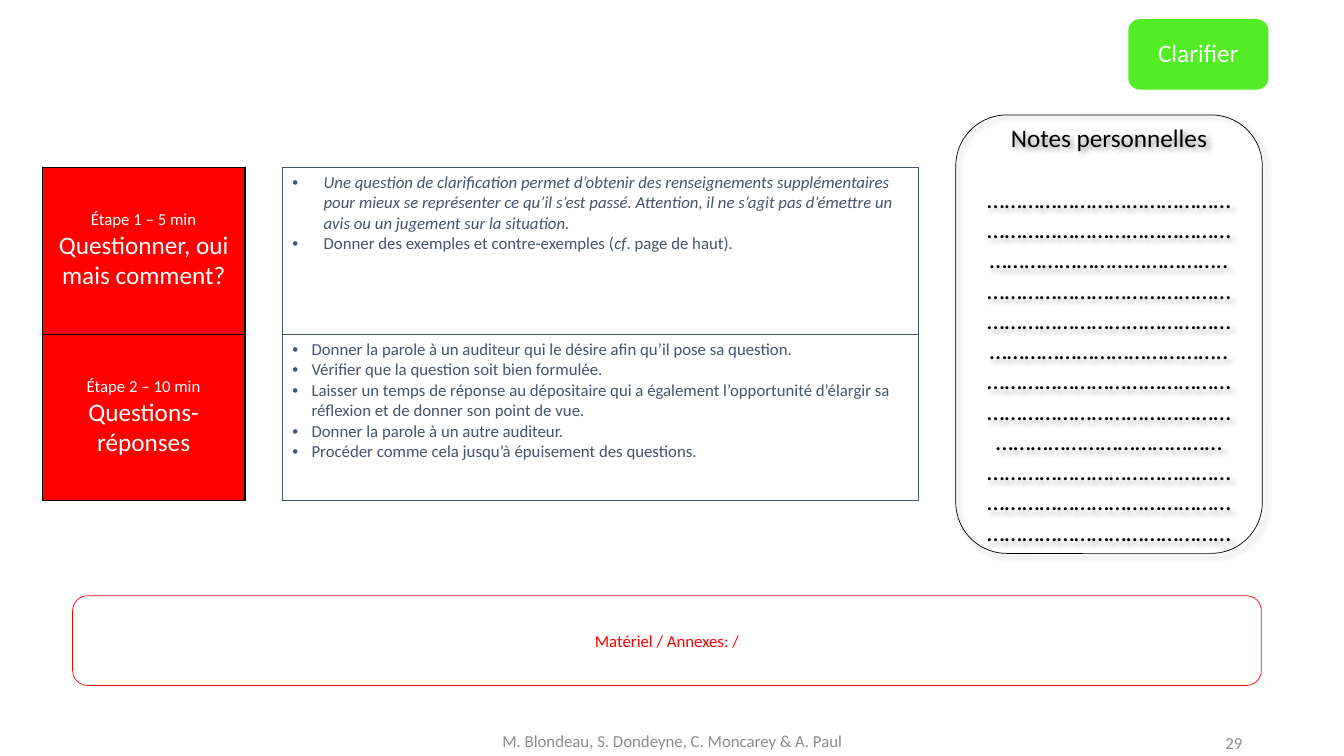
from lxml.etree import SubElement
from pptx import Presentation
from pptx.dml.color import RGBColor
from pptx.enum.shapes import MSO_SHAPE
from pptx.enum.text import MSO_ANCHOR, MSO_AUTO_SIZE, PP_ALIGN
from pptx.oxml import parse_xml
from pptx.oxml.ns import nsdecls, qn
from pptx.util import Inches, Pt

RED = RGBColor(0xFF, 0x00, 0x00)
GREEN = RGBColor(0x52, 0xED, 0x24)
SLATE = RGBColor(0x44, 0x54, 0x6A)
GREY = RGBColor(0x8C, 0x8C, 0x8C)
BLACK = RGBColor(0x00, 0x00, 0x00)
WHITE = RGBColor(0xFF, 0xFF, 0xFF)

STEPS = [
    ("Étape 1 – 5 min", "Questionner, oui mais comment?"),
    ("Étape 2 – 10 min", "Questions-réponses"),
]
DEFINITION = (
    "Une question de clarification permet d’obtenir des renseignements supplémentaires "
    "pour mieux se représenter ce qu’il s’est passé. Attention, il ne s’agit pas d’émettre "
    "un avis ou un jugement sur la situation."
)
GUIDANCE = [
    (0.31, [
        [(DEFINITION, True)],
        [("Donner des exemples et contre-exemples (", False), ("cf", True),
         (". page de haut).", False)],
    ]),
    (0.19, [
        [("Donner la parole à un auditeur qui le désire afin qu’il pose sa question.", False)],
        [("Vérifier que la question soit bien formulée.", False)],
        [("Laisser un temps de réponse au dépositaire qui a également l’opportunité "
          "d’élargir sa réflexion et de donner son point de vue.", False)],
        [("Donner la parole à un autre auditeur.", False)],
        [("Procéder comme cela jusqu’à épuisement des questions.", False)],
    ]),
]
NOTE_LINES = ["…………………………………………………………………………………………………………….."] * 2 + [
    "……………………………………………………………………………………………………………",
    "………………………………………………………………………………………………………………",
]


def next_para(frame):
    """Return the empty first paragraph of a frame, or a new one."""
    first = frame.paragraphs[0]
    return frame.add_paragraph() if first.runs else first


def write(para, text, size=12, color=BLACK, italic=False, align=PP_ALIGN.LEFT):
    """Add one formatted span to a paragraph."""
    para.alignment = align
    span = para.add_run()
    span.text = text
    span.font.name = "Calibri"
    span.font.size = Pt(size)
    span.font.bold = False
    span.font.italic = italic
    span.font.color.rgb = color


def add_rounded(page, box, fill=None, line=None):
    """Draw a rounded rectangle, filled or outlined."""
    shape = page.shapes.add_shape(MSO_SHAPE.ROUNDED_RECTANGLE, *map(Inches, box))
    shape.shadow.inherit = False
    if fill is None:
        shape.fill.background()
    else:
        shape.fill.solid()
        shape.fill.fore_color.rgb = fill
    if line is None:
        shape.line.fill.background()
    else:
        shape.line.color.rgb = line
        shape.line.width = Pt(0.5)
    shape.text_frame.word_wrap = True
    shape.text_frame.vertical_anchor = MSO_ANCHOR.MIDDLE
    return shape


def add_column(page, box, fill, border):
    """Add a bordered two-row table and return its cells."""
    table = page.shapes.add_table(len(STEPS), 1, *map(Inches, box)).table
    table.first_row = False
    table.horz_banding = False
    cells = list(table.iter_cells())
    for cell in cells:
        properties = cell._tc.get_or_add_tcPr()
        for side in ("lnL", "lnR", "lnT", "lnB"):
            properties.append(parse_xml(
                f'<a:{side} {nsdecls("a")} w="12700"><a:solidFill>'
                f'<a:srgbClr val="{border}"/></a:solidFill></a:{side}>'))
        cell.fill.solid()
        cell.fill.fore_color.rgb = fill
    return cells


def add_steps(page, box):
    """Fill the red column with the timed steps."""
    for cell, (timing, name) in zip(add_column(page, box, RED, BLACK), STEPS):
        cell.vertical_anchor = MSO_ANCHOR.MIDDLE
        for text, size in ((timing, 12), (name, 18)):
            write(next_para(cell.text_frame), text, size=size, color=WHITE,
                  align=PP_ALIGN.CENTER)


def add_guidance(page, box):
    """Fill the outlined column with bulleted instructions."""
    for cell, (indent, items) in zip(add_column(page, box, WHITE, SLATE), GUIDANCE):
        for item in items:
            para = next_para(cell.text_frame)
            for text, italic in item:
                write(para, text, color=SLATE, italic=italic)
            properties = para._p.get_or_add_pPr()
            properties.set("marL", str(Inches(indent)))
            properties.set("indent", str(-Inches(indent)))
            SubElement(properties, qn("a:buFont"), typeface="Arial")
            SubElement(properties, qn("a:buChar"), char="•")


def add_notes_panel(page, box):
    """Draw the shadowed panel with dotted writing lines."""
    panel = add_rounded(page, box, line=BLACK)
    effects = panel._element.spPr.find(qn("a:effectLst"))
    effects.append(parse_xml(
        f'<a:outerShdw {nsdecls("a")} blurRad="{Pt(4)}" dist="{Pt(3)}" dir="2700000" '
        f'algn="tl" rotWithShape="0"><a:srgbClr val="{BLACK}"><a:alpha val="43000"/>'
        '</a:srgbClr></a:outerShdw>'))
    for text in ["Notes personnelles", *NOTE_LINES]:
        write(next_para(panel.text_frame), text, size=18, align=PP_ALIGN.CENTER)
    panel.text_frame.paragraphs[0].space_after = Pt(22)


def add_title(page, box):
    """Place the title on its green badge."""
    left, top, width, height = box
    badge = add_rounded(page, box, fill=GREEN)
    title = page.shapes.title
    title.left, title.top = Inches(left + 0.03), Inches(top + 0.03)
    title.width, title.height = Inches(width - 0.06), Inches(height - 0.06)
    badge._element.addnext(title._element)
    frame = title.text_frame
    frame.auto_size = MSO_AUTO_SIZE.NONE
    frame.word_wrap = True
    frame.vertical_anchor = MSO_ANCHOR.MIDDLE
    frame.margin_left = frame.margin_right = Inches(0.07)
    frame.margin_top = frame.margin_bottom = Inches(0.07)
    write(frame.paragraphs[0], "Clarifier", size=18, color=WHITE, align=PP_ALIGN.CENTER)
    frame.paragraphs[0].line_spacing = 0.9


def add_material(page, box):
    """Draw the red outlined material box."""
    shape = add_rounded(page, box, line=RED)
    write(shape.text_frame.paragraphs[0], "Matériel / Annexes: /", color=RED,
          align=PP_ALIGN.CENTER)


def add_footer(page, box, text, align):
    """Write one grey footer item."""
    frame = page.shapes.add_textbox(*map(Inches, box)).text_frame
    frame.word_wrap = True
    frame.vertical_anchor = MSO_ANCHOR.MIDDLE
    write(frame.paragraphs[0], text, color=GREY, align=align)


def main():
    """Build and save the slide."""
    deck = Presentation()
    deck.slide_width, deck.slide_height = Inches(13.33), Inches(7.5)
    page = deck.slides.add_slide(deck.slide_layouts[5])
    add_material(page, (0.72, 5.91, 11.79, 0.89))
    add_notes_panel(page, (9.48, 1.14, 3.04, 4.35))
    add_footer(page, (9.42, 7.17, 3, 0.4), "29", PP_ALIGN.RIGHT)
    add_footer(page, (4.42, 7.15, 4.5, 0.4),
               "M. Blondeau, S. Dondeyne, C. Moncarey & A. Paul", PP_ALIGN.CENTER)
    add_title(page, (11.19, 0.19, 1.39, 0.7))
    add_steps(page, (0.42, 1.66, 2.01, 3.31))
    add_guidance(page, (2.8, 1.66, 6.31, 3.31))
    deck.save("out.pptx")


if __name__ == "__main__":
    main()
